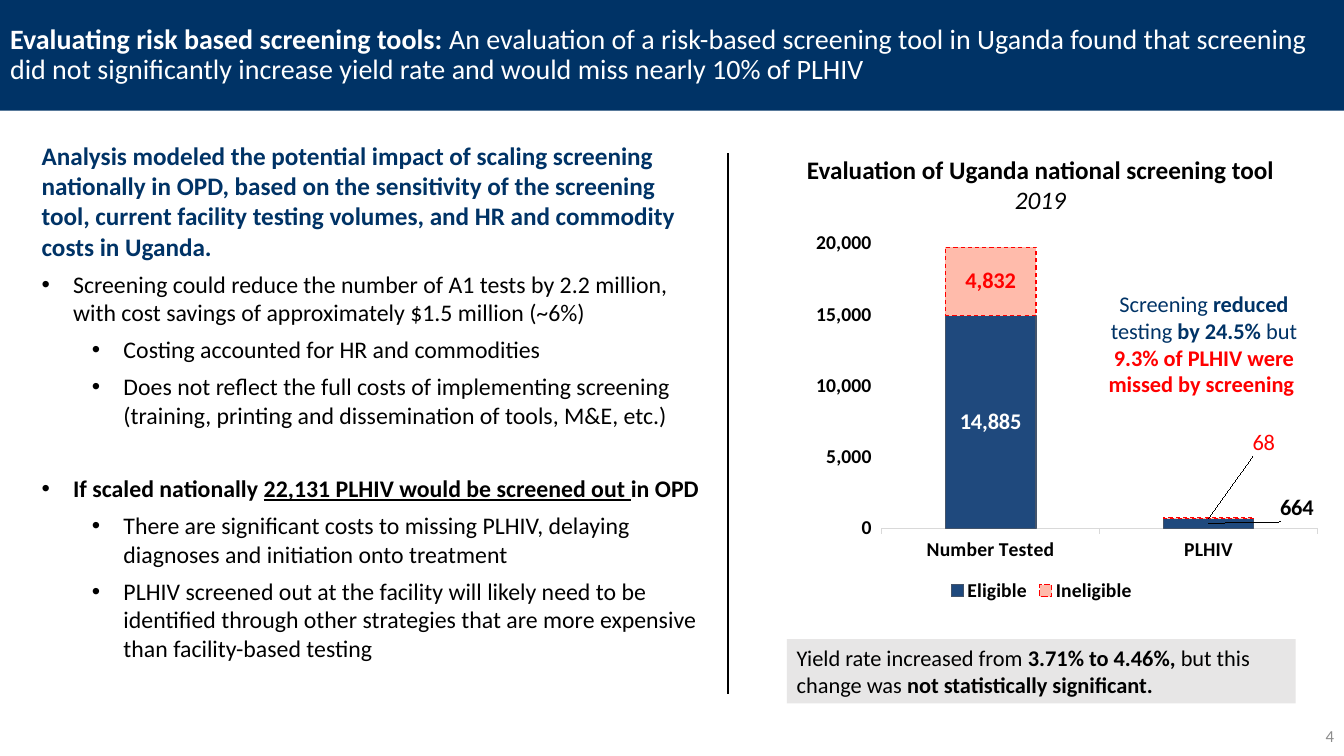
from lxml.etree import SubElement
from pptx import Presentation
from pptx.chart.data import CategoryChartData
from pptx.dml.color import RGBColor
from pptx.enum.chart import XL_CHART_TYPE, XL_LEGEND_POSITION, XL_TICK_MARK
from pptx.enum.dml import MSO_LINE
from pptx.enum.shapes import MSO_CONNECTOR
from pptx.enum.text import MSO_ANCHOR, MSO_AUTO_SIZE, PP_ALIGN
from pptx.oxml import parse_xml
from pptx.oxml.ns import nsdecls, qn
from pptx.util import Pt

FONT = "Calibri"
NAVY = RGBColor(0x00, 0x33, 0x66)
BLUE = RGBColor(0x1F, 0x49, 0x7D)
SLATE = RGBColor(0x44, 0x54, 0x6A)
RED = RGBColor(0xFF, 0x00, 0x00)
PINK = RGBColor(0xFF, 0xBB, 0xAB)
BLACK = RGBColor(0x00, 0x00, 0x00)
WHITE = RGBColor(0xFF, 0xFF, 0xFF)
PALE_GRAY = RGBColor(0xE7, 0xE6, 0xE6)
AXIS_GRAY = RGBColor(0xD9, 0xD9, 0xD9)
NUMBER_GRAY = RGBColor(0x8C, 0x8C, 0x8C)

FINDINGS = [  # level, space before, spans
    (0, 6, [("Screening could reduce the number of A1 tests by 2.2 million, with cost savings "
             "of approximately $1.5 million (~6%)", "")]),
    (1, 6, [("Costing accounted for HR and commodities", "")]),
    (1, 6, [("Does not reflect the full costs of implementing screening (training, printing "
             "and dissemination of tools, M&E, etc.)", "")]),
    (0, 32, [("If scaled nationally ", "b"), ("22,131 PLHIV would be screened out ", "bu"),
             ("in OPD", "b")]),
    (1, 6, [("There are significant costs to missing PLHIV, delaying diagnoses and initiation "
             "onto treatment", "")]),
    (1, 6, [("PLHIV screened out at the facility will likely need to be identified through "
             "other strategies that are more expensive than facility-based testing", "")]),
]


def set_font(font, size, color, bold=None):
    font.name, font.size, font.bold = FONT, Pt(size), bold
    font.color.rgb = color


def write(para, spans, size, color, align=PP_ALIGN.LEFT):
    """Fill a paragraph with (text, style) spans; style letters: b, i, u, r for red."""
    set_font(para.font, size, color)
    para.alignment = align
    for text, style in spans:
        span = para.add_run()
        span.text = text
        span.font.bold = "b" in style
        if "i" in style:
            span.font.italic = True
        if "u" in style:
            span.font.underline = True
        if "r" in style:
            span.font.color.rgb = RED


def place(shape, box):
    shape.left, shape.top, shape.width, shape.height = (Pt(length) for length in box)


def fill_with(shape, color):
    shape.fill.solid()
    shape.fill.fore_color.rgb = color


def add_text(page, box, anchor=MSO_ANCHOR.TOP, fill=None):
    shape = page.shapes.add_textbox(*(Pt(length) for length in box))
    if fill is not None:
        fill_with(shape, fill)
    frame = shape.text_frame
    frame.word_wrap, frame.vertical_anchor = True, anchor
    return frame


def set_bullet(para, level):
    properties = para._p.get_or_add_pPr()
    properties.set("marL", str(Pt(22.5 + 36 * level)))
    properties.set("indent", str(Pt(-22.5)))
    default_font = properties.find(qn("a:defRPr"))
    for tag, name, value in (("a:buFont", "typeface", "Arial"), ("a:buChar", "char", "•")):
        bullet = SubElement(properties, qn(tag), {name: value})
        default_font.addprevious(bullet)


def title_band(page, box):
    title = page.shapes.title
    place(title, box)
    fill_with(title, NAVY)
    frame = title.text_frame
    frame.auto_size, frame.vertical_anchor = MSO_AUTO_SIZE.NONE, MSO_ANCHOR.MIDDLE
    para = frame.paragraphs[0]
    para.line_spacing = 0.9
    write(para, [("Evaluating risk based screening tools: ", "b"),
                 ("An evaluation of a risk-based screening tool in Uganda found that screening did "
                  "not significantly increase yield rate and would miss nearly 10% of PLHIV", "")],
          20, WHITE)


def findings_list(page, box):
    body = page.placeholders[1]
    place(body, box)
    frame = body.text_frame
    frame.auto_size = MSO_AUTO_SIZE.NONE
    lead = frame.paragraphs[0]
    write(lead, [("Analysis modeled the potential impact of scaling screening nationally in OPD, "
                  "based on the sensitivity of the screening tool, current facility testing "
                  "volumes, and HR and commodity costs in Uganda.", "b")], 18, NAVY)
    lead.space_before = Pt(0)
    properties = lead._p.get_or_add_pPr()
    properties.set("marL", "0")
    properties.set("indent", "0")
    properties.find(qn("a:defRPr")).addprevious(SubElement(properties, qn("a:buNone")))
    for level, gap, spans in FINDINGS:
        para = frame.add_paragraph()
        para.level, para.space_before = level, Pt(gap)
        write(para, spans, 17, BLACK)
        set_bullet(para, level)


def divider(page, x, top, bottom):
    line = page.shapes.add_connector(MSO_CONNECTOR.STRAIGHT, Pt(x), Pt(top), Pt(x), Pt(bottom))
    line.line.color.rgb, line.line.width = BLACK, Pt(1.5)
    SubElement(line._element.spPr, qn("a:effectLst"))


def manual_layout(sizes, inner=False):
    target = '<c:layoutTarget val="inner"/>' if inner else ""
    modes = '<c:xMode val="edge"/><c:yMode val="edge"/>' if inner else ""
    values = "".join(f'<c:{name} val="{size}"/>' for name, size in zip("xywh", sizes))
    return parse_xml(f'<c:layout {nsdecls("c")}><c:manualLayout>{target}{modes}{values}'
                     '</c:manualLayout></c:layout>')


def shift_label(label, x, y):
    label._dLbl.insert(1, manual_layout((x, y)))


def screening_chart(page, box):
    data = CategoryChartData(number_format="#,##0")
    data.categories = ["Number Tested", "PLHIV"]
    data.add_series("Eligible", (14885, 664))
    data.add_series("Ineligible", (4832, 70))
    chart = page.shapes.add_chart(XL_CHART_TYPE.COLUMN_STACKED,
                                  *(Pt(length) for length in box), data).chart
    set_font(chart.font, 16, BLACK)
    chart.has_title = False
    chart.has_legend = True
    chart.legend.position, chart.legend.include_in_layout = XL_LEGEND_POSITION.BOTTOM, False
    for part in (chart.legend.font, chart.category_axis.tick_labels.font,
                 chart.value_axis.tick_labels.font):
        set_font(part, 14, BLACK, True)

    values, categories = chart.value_axis, chart.category_axis
    values.minimum_scale, values.maximum_scale, values.major_unit = 0, 20000, 5000
    values.has_major_gridlines = False
    values.format.line.fill.background()
    values.tick_labels.number_format = "#,##0"
    values.tick_labels.number_format_is_linked = False
    categories.major_tick_mark = XL_TICK_MARK.OUTSIDE
    categories.format.line.color.rgb, categories.format.line.width = AXIS_GRAY, Pt(0.75)

    plot = chart.plots[0]
    plot.gap_width, plot.overlap, plot.vary_by_categories = 140, 100, False
    styles = ((BLUE, SLATE, BLACK), (PINK, RED, RED))
    for series, (fill, outline, label_color) in zip(plot.series, styles):
        fill_with(series.format, fill)
        series.format.line.color.rgb, series.format.line.width = outline, Pt(0.75)
        labels = series.data_labels
        labels.show_value = True
        labels.number_format, labels.number_format_is_linked = "#,##0", False
        set_font(labels.font, 16, label_color, True)
    eligible, ineligible = plot.series
    ineligible.format.line.dash_style = MSO_LINE.DASH

    set_font(eligible.points[0].data_label.font, 16, WHITE, True)
    eligible_label = eligible.points[1].data_label
    set_font(eligible_label.font, 16, BLACK, True)
    shift_label(eligible_label, 0.16, -0.04)
    missed_label = ineligible.points[1].data_label
    write(missed_label.text_frame.paragraphs[0], [("68", "r")], 16, RED, PP_ALIGN.CENTER)
    set_font(missed_label.text_frame.paragraphs[0].runs[0].font, 16, RED, False)
    shift_label(missed_label, 0.1, -0.2)

    area = chart._chartSpace.chart.plotArea
    for old in area.findall(qn("c:layout")):
        area.remove(old)
    area.insert(0, manual_layout((0.21, 0.03, 0.79, 0.76), inner=True))


def evaluation_panel(page, box):
    left, top, width, height = box
    heading = add_text(page, (left + 22, top, 348.5, 51))
    write(heading.paragraphs[0], [("Evaluation of Uganda national screening tool", "b")],
          18, BLACK, PP_ALIGN.CENTER)
    write(heading.add_paragraph(), [("2019", "i")], 18, BLACK, PP_ALIGN.CENTER)
    screening_chart(page, (left, top + 58.5, width, 268.5))
    callout = add_text(page, (left + 232, top + 89.5, 162, 99), MSO_ANCHOR.MIDDLE, WHITE)
    write(callout.paragraphs[0],
          [("Screening", ""), (" reduced ", "b"), ("testing ", ""), ("by 24.5% ", "b"),
           ("but ", ""), ("9.3% of PLHIV were missed by screening ", "br")],
          16, NAVY, PP_ALIGN.CENTER)
    note = add_text(page, (left + 15, top + height - 46, 363.5, 46), fill=PALE_GRAY)
    write(note.paragraphs[0],
          [("Yield rate increased from ", ""), ("3.71% to 4.46%, ", "b"),
           ("but this change was ", ""), ("not statistically significant.", "b")], 16, BLACK)


def page_number(page, box):
    para = add_text(page, box, MSO_ANCHOR.MIDDLE).paragraphs[0]
    write(para, [("4", "")], 12, NUMBER_GRAY, PP_ALIGN.RIGHT)


def main():
    deck = Presentation()
    deck.slide_width, deck.slide_height = Pt(960), Pt(540)
    page = deck.slides.add_slide(deck.slide_layouts[1])
    title_band(page, (0, 0, 960, 79))
    findings_list(page, (22.5, 96.5, 489, 384))
    divider(page, 520, 109.5, 496)
    evaluation_panel(page, (547, 106.5, 394.5, 396))
    page_number(page, (744, 511, 216, 29))
    deck.save("out.pptx")


if __name__ == "__main__":
    main()
